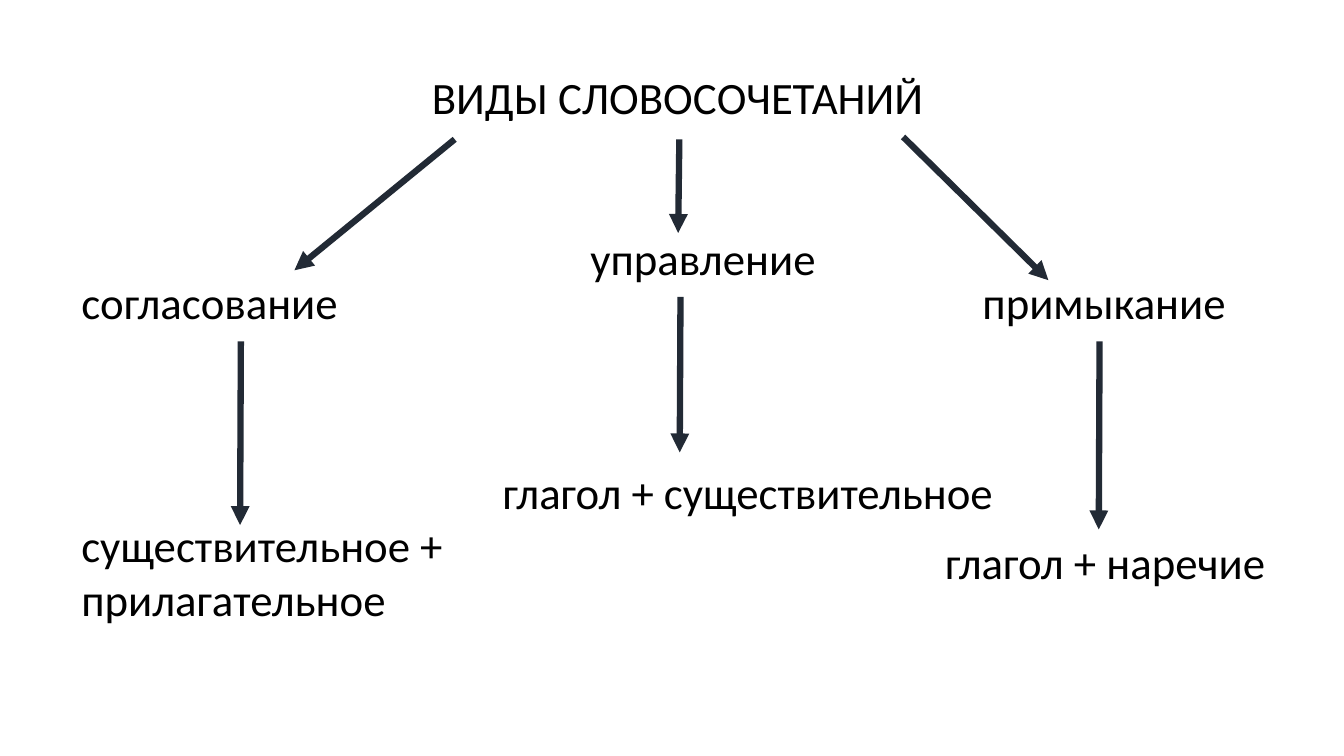
from pptx import Presentation
from pptx.dml.color import RGBColor
from pptx.enum.shapes import MSO_CONNECTOR
from pptx.enum.text import MSO_AUTO_SIZE, PP_ALIGN
from pptx.oxml.ns import qn
from pptx.util import Cm, Pt
from lxml.etree import SubElement

BLACK = RGBColor(0x00, 0x00, 0x00)
NAVY = RGBColor(0x22, 0x2A, 0x35)

FRAME = {"word_wrap": True, "auto_size": MSO_AUTO_SIZE.SHAPE_TO_FIT_TEXT}
FONT = {"name": "Calibri", "size": Pt(32)}
ROW = 1.63  # height of one line of text
NAME = 7.57  # width of a branch name
GAP = 1.79  # from the top of a name to its arrow

TITLE = (10.59, 1.63, 12.98, ROW)
# box, name, parts, lines of parts' height, name shift,
# entry arrow: start in the title box, tip in the branch box
# stem: x in the branch box, tip relative to the parts
BRANCHES = [
    ((1.8, 6.81, 11.48, 9.12), "согласование", "существительное + прилагательное",
     3.0, 0, (0.87, 1.88), (5.62, 0), (4.27, 0.3)),
    ((12.42, 5.69, 13.23, 7.52), "управление", "глагол + существительное",
     ROW, 2.21, (6.53, 1.88), (4.67, 0.18), (4.73, -0.18)),
    ((23.57, 6.81, 9.47, 8.16), "примыкание", "глагол + наречие",
     ROW, 0.94, (12.17, 1.82), (2.85, 0.25), (4.14, 0)),
]


def style(item, values):
    for key, value in values.items():
        setattr(item, key, value)


def label(slide, box, text, align=PP_ALIGN.LEFT):
    frame = slide.shapes.add_textbox(*map(Cm, box)).text_frame
    style(frame, FRAME)
    par = frame.paragraphs[0]
    par.alignment = align
    run = par.add_run()
    run.text = text
    style(run.font, FONT)
    run.font.color.rgb = BLACK


def arrow(slide, start, end):
    line = slide.shapes.add_connector(
        MSO_CONNECTOR.STRAIGHT, *map(Cm, (*start, *end)))
    line.line.color.rgb = NAVY
    line.line.width = Pt(4.5)
    SubElement(line.line._get_or_add_ln(), qn("a:tailEnd"), type="triangle")
    SubElement(line._element.spPr, qn("a:effectLst"))


def branch(slide, box, name, parts, height, shift, start, tip, stem):
    """Place a name, its parts at the foot of the box, and both arrows."""
    left, top, width, depth = box
    foot = top + depth - height
    label(slide, (left + shift, top, NAME, ROW), name)
    label(slide, (left, foot, width, height), parts)
    arrow(slide, (TITLE[0] + start[0], TITLE[1] + start[1]),
          (left + tip[0], top + tip[1]))
    x, drop = stem
    arrow(slide, (left + x, top + GAP), (left + x - 0.02, foot + drop))


def main():
    deck = Presentation()
    style(deck, {"slide_width": Cm(33.87), "slide_height": Cm(19.05)})
    slide = deck.slides.add_slide(deck.slide_layouts[6])
    label(slide, TITLE, "ВИДЫ СЛОВОСОЧЕТАНИЙ", PP_ALIGN.CENTER)
    for item in BRANCHES:
        branch(slide, *item)
    deck.save("out.pptx")


if __name__ == "__main__":
    main()
